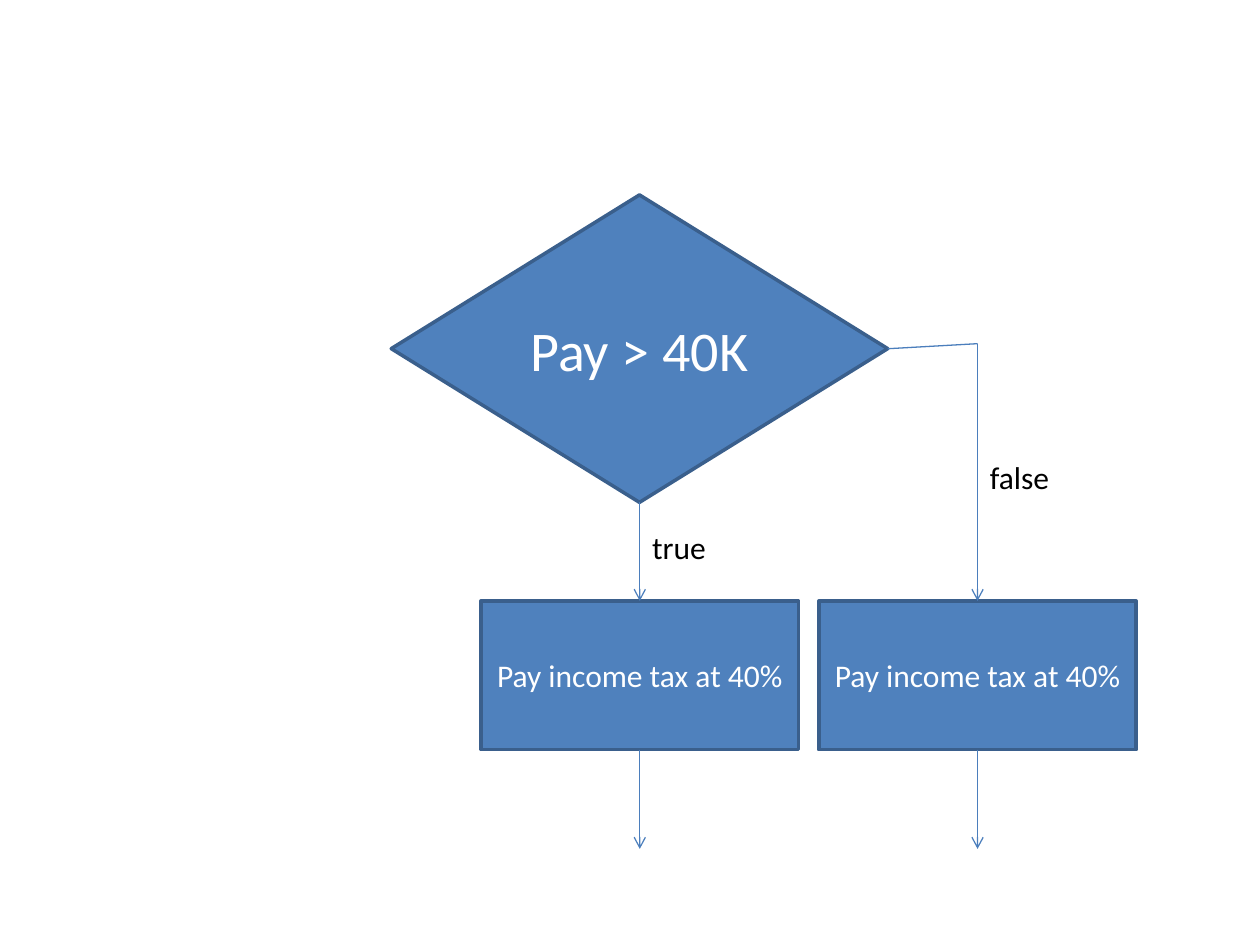
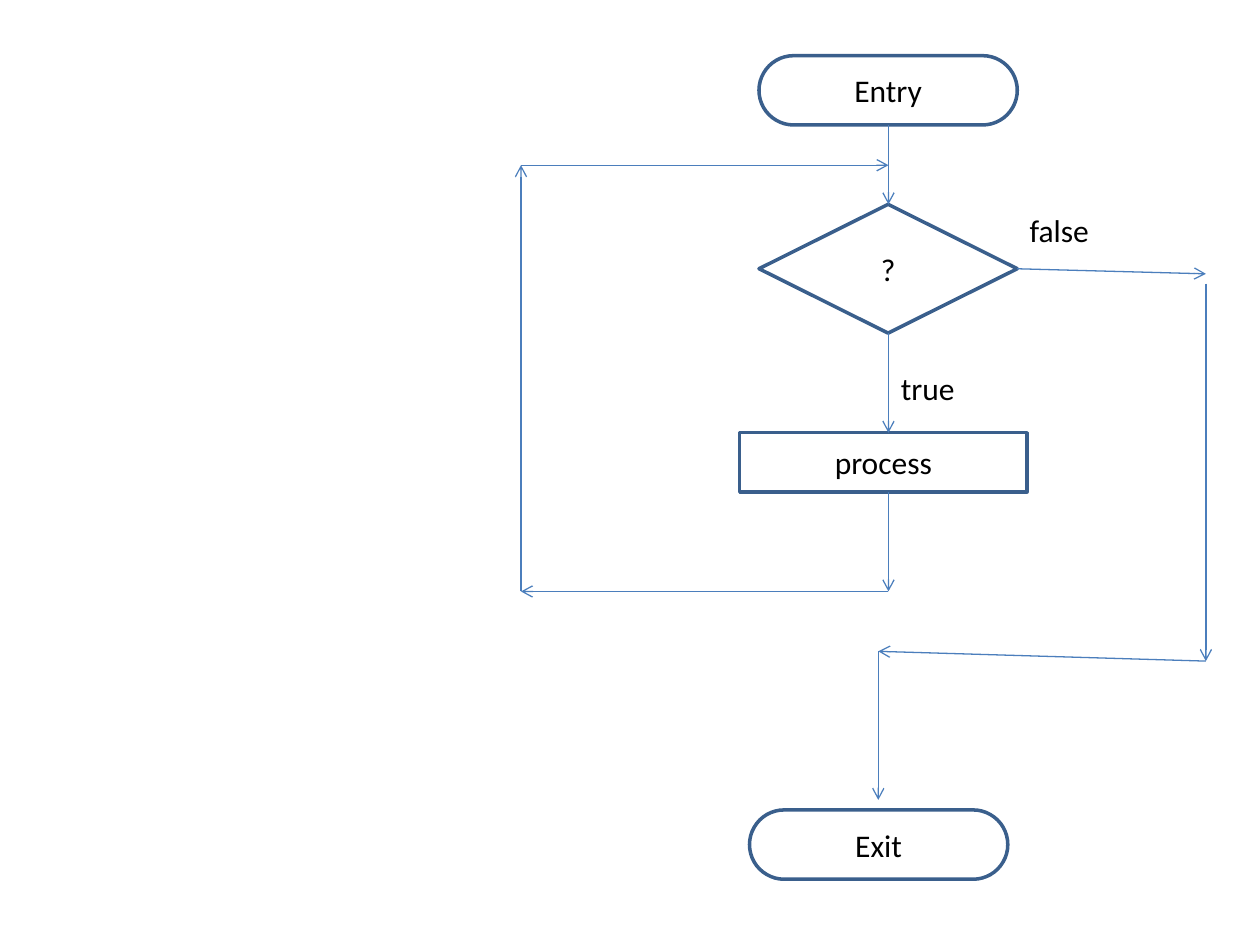
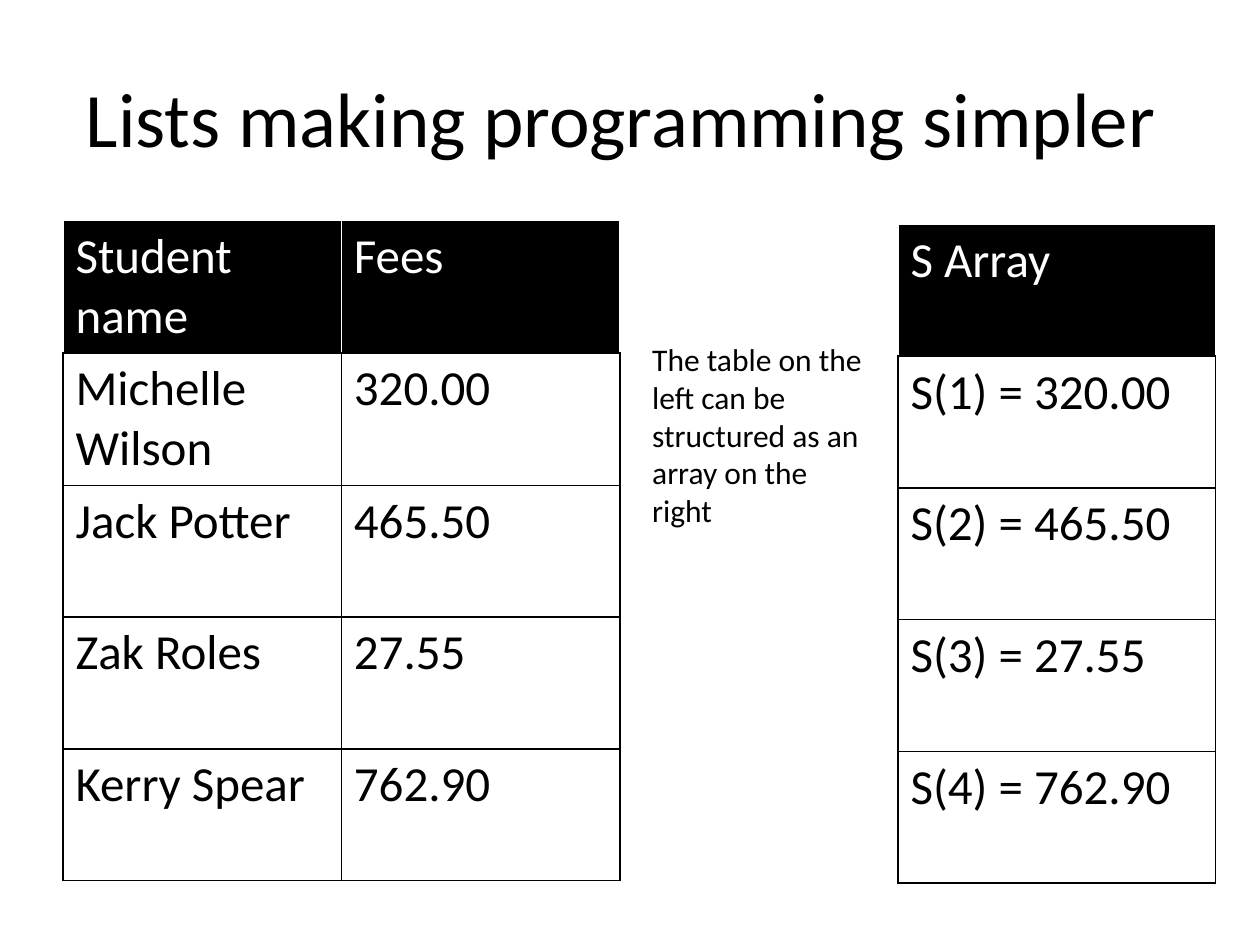
from itertools import pairwise

from lxml import etree
from pptx import Presentation
from pptx import util as u
from pptx.dml.color import RGBColor
from pptx.enum import shapes, text
from pptx.oxml import ns

FONT = "Calibri"
BLACK, WHITE = "000000", "FFFFFF"
BLUE, OUTLINE, ARROW = "4F81BD", "3A5F8C", "4B7EBC"
TITLE_ONLY, BLANK = 5, 6
Shape = shapes.MSO_SHAPE


def rgb(value):
    return RGBColor.from_string(value)


def points(*values):
    return [u.Pt(value) for value in values]


def write(frame, wording, size, color=BLACK, align=None):
    frame.word_wrap = True
    frame.text = wording
    paragraph = frame.paragraphs[0]
    paragraph.alignment = align
    font = paragraph.font
    font.name, font.size = FONT, u.Pt(size)
    font.color.rgb = rgb(color)


def add_label(slide, box, wording):
    label = slide.shapes.add_textbox(*points(*box))
    write(label.text_frame, wording, 18)


def add_node(slide, kind, box, wording, fill=WHITE, color=BLACK, size=18):
    node = slide.shapes.add_shape(kind, *points(*box))
    node.shadow.inherit = False
    node.fill.solid()
    node.fill.fore_color.rgb = rgb(fill)
    node.line.color.rgb = rgb(OUTLINE)
    node.line.width = u.Pt(2)
    node.text_frame.vertical_anchor = text.MSO_ANCHOR.MIDDLE
    write(node.text_frame, wording, size, color, text.PP_ALIGN.CENTER)
    return node


def add_terminal(slide, box, wording):
    terminal = add_node(slide, Shape.ROUNDED_RECTANGLE, box, wording)
    terminal.adjustments[0] = 0.5


def add_route(slide, left, top, stops, arrow=True):
    for (x1, y1), (x2, y2) in pairwise(stops):
        connector = slide.shapes.add_connector(
            shapes.MSO_CONNECTOR.STRAIGHT,
            *points(left + x1, top + y1, left + x2, top + y2))
        connector.line.color.rgb = rgb(ARROW)
        connector.line.width = u.Pt(0.75)
        properties = connector._element.spPr
        if arrow:
            line = properties.find(ns.qn("a:ln"))
            etree.SubElement(line, ns.qn("a:tailEnd"), type="arrow")
        etree.SubElement(properties, ns.qn("a:effectLst"))


def add_selection(slide, left, top):
    spine, step, process_top, process_height = 142, 193, 232, 85
    process_bottom = process_top + process_height
    add_node(slide, Shape.FLOWCHART_DECISION, (left, top, 283.7, 175.7),
             "Pay > 40K", BLUE, WHITE, 32)
    branches = (("true", 175.7, 186.5), ("false", 85, 147))
    for index, (answer, start, label_top) in enumerate(branches):
        x = spine + index * step
        add_node(slide, Shape.RECTANGLE,
                 (left + x - 90.7, top + process_top, 181.4, process_height),
                 "Pay income tax at 40%", BLUE, WHITE)
        add_route(slide, left, top, [(x, start), (x, process_top)])
        add_route(slide, left, top, [(x, process_bottom), (x, 373.7)])
        add_label(slide, (left + x, top + label_top, 108, 29), answer)
    add_route(slide, left, top, [(283.7, 87.9), (spine + step, 85)], arrow=False)


def add_loop(slide, left, top):
    spine, far, exit_x, back = 210, 391.4, 204.2, 62.6
    add_terminal(slide, (left + 136, top, 147.6, 39.6), "Entry")
    add_node(slide, Shape.DIAMOND, (left + 136, top + 85, 147.6, 73.6), "?")
    add_node(slide, Shape.RECTANGLE,
             (left + 125, top + 215.5, 164.2, 33.8), "process")
    add_terminal(slide, (left + 130.6, top + 431, 147.6, 39.6), "Exit")
    routes = (
        [(spine, 39.6), (spine, 85)],
        [(spine, 158.6), (spine, 215.5)],
        [(spine, 249.3), (spine, 306.2), (0, 306.2), (0, back), (spine, back)],
        [(283.6, 121.8), (far, 124.7)],
        [(far, 130.3), (far, 346), (exit_x, 340.4), (exit_x, 425.3)],
    )
    for stops in routes:
        add_route(slide, left, top, stops)
    add_label(slide, (left + spine, top + 175.7, 45.4, 29), "true")
    add_label(slide, (left + 283.6, top + 85.2, 62.6, 29), "false")


def add_borders(cell, colors):
    properties = cell._tc.get_or_add_tcPr()
    for side, color in zip("LRTB", colors):
        line = etree.SubElement(properties, ns.qn(f"a:ln{side}"), w=str(u.Pt(1)))
        fill = etree.SubElement(line, ns.qn("a:solidFill"))
        etree.SubElement(fill, ns.qn("a:srgbClr"), val=color)


def add_list_table(slide, left, top, column_width, rows):
    row_height, columns = 75.3, len(rows[0])
    table = slide.shapes.add_table(
        len(rows), columns,
        *points(left, top, columns * column_width, len(rows) * row_height)).table
    table.first_row = table.horz_banding = False
    for column in table.columns:
        column.width = u.Pt(column_width)
    for row_index, values in enumerate(rows):
        table.rows[row_index].height = u.Pt(row_height)
        header = row_index == 0
        fill, color = (BLACK, WHITE) if header else (WHITE, BLACK)
        for column_index, value in enumerate(values):
            cell = table.cell(row_index, column_index)
            add_borders(cell, [color] * 3 + [BLACK])
            cell.fill.solid()
            cell.fill.fore_color.rgb = rgb(fill)
            write(cell.text_frame, value, 28, color)


def add_title(slide, wording):
    title = slide.shapes.title
    title.left, title.top, title.width, title.height = points(36, 21.6, 648, 90)
    title.text_frame.vertical_anchor = text.MSO_ANCHOR.MIDDLE
    write(title.text_frame, wording, 44, align=text.PP_ALIGN.CENTER)


def add_lists(slide, left, top):
    fees = [("Michelle Wilson", "320.00"), ("Jack Potter", "465.50"),
            ("Zak Roles", "27.55"), ("Kerry Spear", "762.90")]
    array = [(f"S({index}) = {fee}",) for index, (_, fee) in enumerate(fees, 1)]
    add_list_table(slide, left, top, 159.1, [("Student name", "Fees"), *fees])
    add_label(slide, (left + 329.6, top + 64.7, 136, 116.6),
              "The table on the left can be structured as an array on the right")
    add_list_table(slide, left + 477.1, top + 2.2, 181.4, [("S Array",), *array])


def main():
    presentation = Presentation()
    presentation.slide_width, presentation.slide_height = points(720, 540)
    layouts = presentation.slide_layouts

    for add_flow, left, top in ((add_selection, 223.6, 111.4),
                                (add_loop, 297.7, 31.8)):
        slide = presentation.slides.add_slide(layouts[BLANK])
        add_flow(slide, left, top)

    slide = presentation.slides.add_slide(layouts[TITLE_ONLY])
    add_title(slide, "Lists making programming simpler ")
    add_lists(slide, 36, 126)

    presentation.save("out.pptx")


if __name__ == "__main__":
    main()
